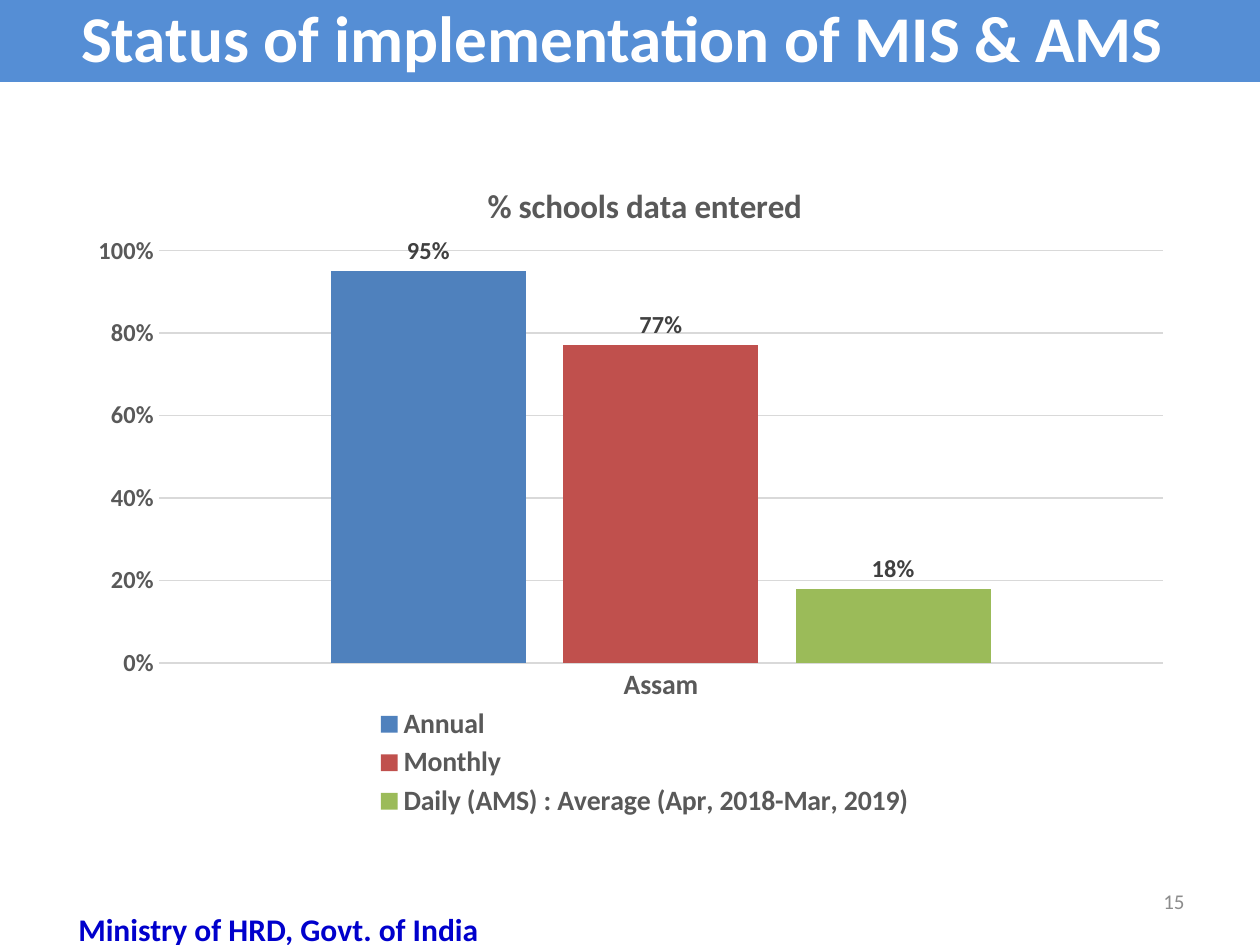
from lxml.etree import SubElement
from pptx import Presentation
from pptx.chart.data import CategoryChartData
from pptx.dml.color import RGBColor
from pptx.enum.chart import XL_CHART_TYPE as ChartType
from pptx.enum.chart import XL_LABEL_POSITION as LabelPosition
from pptx.enum.chart import XL_LEGEND_POSITION as LegendPosition
from pptx.enum.chart import XL_TICK_MARK as TickMark
from pptx.enum.shapes import MSO_SHAPE as Shape
from pptx.enum.text import MSO_ANCHOR as Anchor
from pptx.enum.text import PP_ALIGN as Align
from pptx.oxml.ns import qn
from pptx.util import Pt

FONT = "Calibri"
COLORS = {
    "banner": "558ED5",
    "white": "FFFFFF",
    "ministry": "0000CC",
    "page": "8C8C8C",
    "axis": "595959",
    "label": "404040",
    "grid": "D9D9D9",
}
ENTRIES = [
    ("Annual", 0.95, "4F81BD"),
    ("Monthly", 0.77, "C0504D"),
    ("Daily (AMS) : Average (Apr, 2018-Mar, 2019)", 0.18, "9BBB59"),
]


def rgb(name):
    return RGBColor.from_string(COLORS.get(name, name))


def style_font(font, size, color, bold=True):
    font.name = FONT
    font.size = Pt(size)
    font.bold = bold
    font.color.rgb = rgb(color)


def write_line(frame, text, size, color, align, anchor, bold=True):
    frame.word_wrap = True
    frame.vertical_anchor = anchor
    paragraph = frame.paragraphs[0]
    paragraph.alignment = align
    run = paragraph.add_run()
    run.text = text
    style_font(run.font, size, color, bold)


def add_banner(slide, text):
    banner = slide.shapes.add_shape(Shape.RECTANGLE, Pt(0), Pt(-5.76), Pt(720), Pt(52.56))
    banner.shadow.inherit = False
    banner.fill.solid()
    banner.fill.fore_color.rgb = rgb("banner")
    banner.line.fill.background()
    write_line(banner.text_frame, text, 37.3, "white", Align.CENTER, Anchor.MIDDLE)


def add_caption(slide, box, text, size, color, align, anchor, bold):
    caption = slide.shapes.add_textbox(*map(Pt, box))
    write_line(caption.text_frame, text, size, color, align, anchor, bold)


def place_by_hand(part, position, inner=False):
    for automatic in part.findall(qn("c:layout")):
        part.remove(automatic)
    layout = SubElement(part, qn("c:layout"))
    manual = SubElement(layout, qn("c:manualLayout"))
    settings = [("layoutTarget", "inner")] if inner else []
    settings += [("xMode", "edge"), ("yMode", "edge")]
    settings += zip("xywh", position)
    for tag, value in settings:
        SubElement(manual, qn(f"c:{tag}")).set("val", str(value))
    part.insert(0 if inner else 1, layout)


def style_axes(chart):
    region_axis, share_axis = chart.category_axis, chart.value_axis
    for axis, size in ((region_axis, 16), (share_axis, 14)):
        axis.major_tick_mark = axis.minor_tick_mark = TickMark.NONE
        style_font(axis.tick_labels.font, size, "axis")
    share_axis.minimum_scale, share_axis.maximum_scale = 0, 1
    share_axis.major_unit = 0.2
    share_axis.tick_labels.number_format = "0%"
    share_axis.tick_labels.number_format_is_linked = False
    share_axis.format.line.fill.background()
    for line in (region_axis.format.line, share_axis.major_gridlines.format.line):
        line.color.rgb = rgb("grid")
        line.width = Pt(0.75)


def style_series(series, color):
    series.format.fill.solid()
    series.format.fill.fore_color.rgb = rgb(color)
    labels = series.data_labels
    labels.show_value = True
    labels.number_format = "0%"
    labels.number_format_is_linked = False
    labels.position = LabelPosition.OUTSIDE_END
    style_font(labels.font, 14, "label")


def add_schools_chart(slide):
    shares = CategoryChartData(number_format="0%")
    shares.categories = ["Assam"]
    for name, share, _ in ENTRIES:
        shares.add_series(name, [share])
    chart = slide.shapes.add_chart(
        ChartType.COLUMN_CLUSTERED, Pt(56.16), Pt(90), Pt(620.64), Pt(380.16), shares
    ).chart
    style_font(chart.font, 10, "000000", False)

    chart.has_title = True
    heading = chart.chart_title.text_frame.paragraphs[0].add_run()
    heading.text = "% schools data entered"
    style_font(heading.font, 19, "axis")
    chart.chart_title.include_in_layout = False

    columns = chart.plots[0]
    columns.gap_width, columns.overlap = 176, -19
    columns.vary_by_categories = False
    for series, (_, _, color) in zip(columns.series, ENTRIES):
        style_series(series, color)
    style_axes(chart)

    chart.has_legend = True
    chart.legend.position = LegendPosition.BOTTOM
    chart.legend.include_in_layout = False
    style_font(chart.legend.font, 16, "axis")
    body = chart.element.find(qn("c:chart"))
    place_by_hand(body.find(qn("c:plotArea")), (0.05, 0.14, 0.93, 0.62), inner=True)
    place_by_hand(body.find(qn("c:legend")), (0.25, 0.82, 0.5, 0.18))


def main():
    deck = Presentation()
    deck.slide_width, deck.slide_height = Pt(720), Pt(540)
    slide = deck.slides.add_slide(deck.slide_layouts[6])
    add_schools_chart(slide)
    add_banner(slide, "Status of implementation of MIS & AMS ")
    add_caption(slide, (516.24, 500.4, 167.76, 28.8), "15", 12, "page",
                Align.RIGHT, Anchor.MIDDLE, False)
    add_caption(slide, (18, 516.24, 282.24, 28.8), "Ministry of HRD, Govt. of India", 18,
                "ministry", Align.CENTER, Anchor.TOP, True)
    deck.save("out.pptx")


if __name__ == "__main__":
    main()
